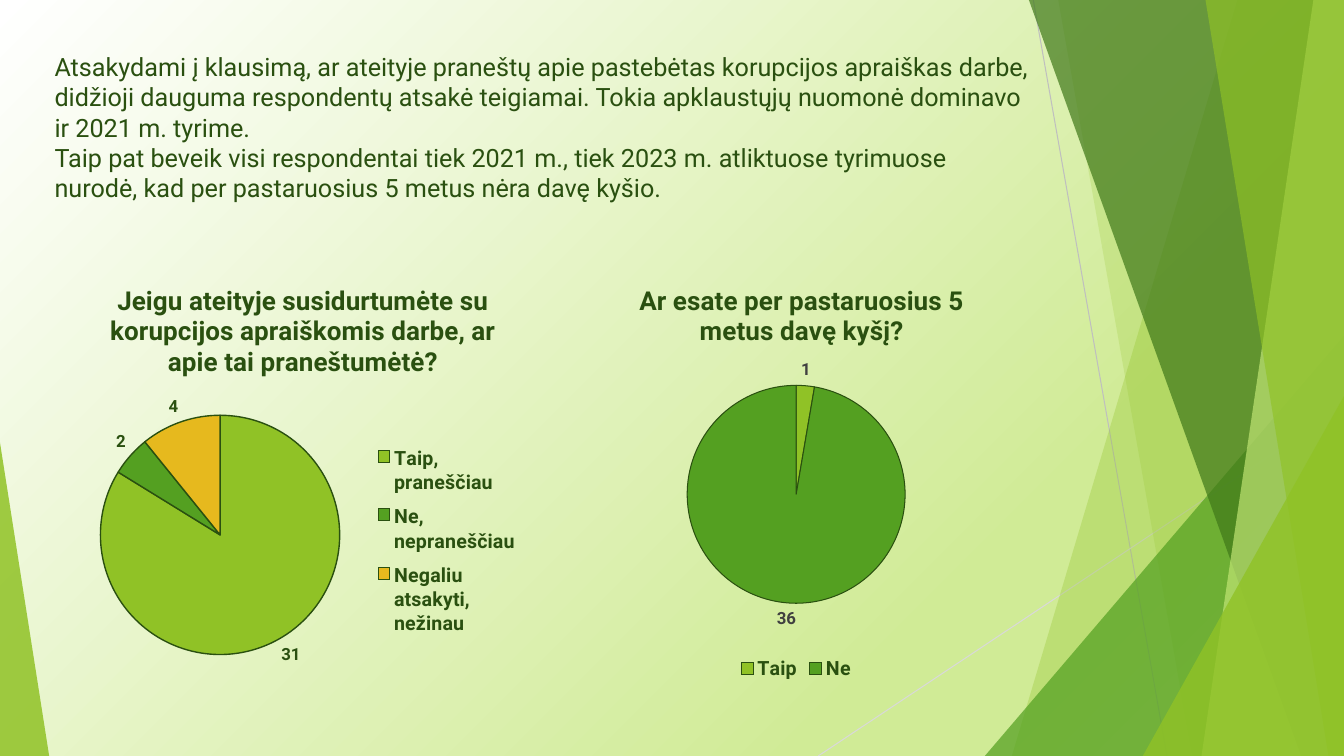
import dataclasses

import pptx
import pptx.chart.data
import pptx.dml.color
import pptx.enum.chart
import pptx.enum.shapes
import pptx.enum.text
import pptx.oxml
import pptx.oxml.ns
import pptx.util

Cm = pptx.util.Cm
Pt = pptx.util.Pt
RGBColor = pptx.dml.color.RGBColor
LegendPosition = pptx.enum.chart.XL_LEGEND_POSITION
qn = pptx.oxml.ns.qn

FONT = "Roboto"
WHITE = RGBColor(0xFF, 0xFF, 0xFF)
PALE_LIME = RGBColor(0xD0, 0xEB, 0x96)
MIST = RGBColor(0xDF, 0xF1, 0xB9)
LIME = RGBColor(0x90, 0xC2, 0x26)
LIGHT_LIME = RGBColor(0xC0, 0xE4, 0x74)
GREEN = RGBColor(0x54, 0xA0, 0x21)
FOREST = RGBColor(0x3F, 0x78, 0x19)
DARK_GREEN = RGBColor(0x2A, 0x50, 0x10)
AMBER = RGBColor(0xE6, 0xB9, 0x1E)
CHARCOAL = RGBColor(0x40, 0x40, 0x40)
SILVER = RGBColor(0xBF, 0xBF, 0xBF)
LIGHT_GREY = RGBColor(0xD9, 0xD9, 0xD9)

BACKGROUND_STOPS = [(0, WHITE), (74, PALE_LIME), (83, PALE_LIME), (100, MIST)]
SLICE_COLORS = [LIME, GREEN, AMBER]

INTRO = (
    "Atsakydami į klausimą, ar ateityje praneštų apie pastebėtas korupcijos "
    "apraiškas darbe, didžioji dauguma respondentų atsakė teigiamai. Tokia "
    "apklaustųjų nuomonė dominavo ir 2021 m. tyrime.\v"
    "Taip pat beveik visi respondentai tiek 2021 m., tiek 2023 m. atliktuose "
    "tyrimuose nurodė, kad per pastaruosius 5 metus nėra davę kyšio."
)


@dataclasses.dataclass
class Box:
    """A region in centimetres."""
    left: float
    top: float
    width: float
    height: float

    @property
    def right(self):
        return self.left + self.width

    @property
    def bottom(self):
        return self.top + self.height

    def lengths(self):
        return Cm(self.left), Cm(self.top), Cm(self.width), Cm(self.height)


@dataclasses.dataclass
class Survey:
    question: str
    answers: dict
    legend_position: LegendPosition
    label_color: RGBColor
    outline: float
    title_layout: dict
    pie_layout: dict
    legend_layout: dict


def paint_background(page):
    fill = page.background.fill
    fill.gradient()
    fill.gradient_angle = 315
    stops = next(page.element.iter(qn("a:gsLst")))
    for old in list(stops):
        stops.remove(old)
    for percent, color in BACKGROUND_STOPS:
        stop = pptx.oxml.parse_xml(
            f'<a:gs {pptx.oxml.ns.nsdecls("a")} pos="{percent * 1000}">'
            f'<a:srgbClr val="{color}"/></a:gs>')
        stops.append(stop)


def paint_glass(shape, color, opacity):
    """Fill a shape with a see-through colour; opacity is a percentage."""
    shape.shadow.inherit = False
    shape.line.fill.background()
    shape.fill.solid()
    shape.fill.fore_color.rgb = color
    color_node = next(shape.element.spPr.iter(qn("a:srgbClr")))
    alpha = color_node.makeelement(qn("a:alpha"), {"val": str(opacity * 1000)})
    color_node.append(alpha)


def add_hairline(page, start, end, color):
    line = page.shapes.add_connector(
        pptx.enum.shapes.MSO_CONNECTOR.STRAIGHT, *map(Cm, start + end))
    line.line.color.rgb = color
    line.line.width = Pt(0.75)
    properties = line.element.spPr
    properties.append(properties.makeelement(qn("a:effectLst"), {}))


def add_facet(page, box, top_inset, bottom_inset, color, opacity):
    """Panel from a slanted left edge to the right side of the box."""
    builder = page.shapes.build_freeform(Cm(box.right - top_inset), Cm(box.top))
    builder.add_line_segments([
        (Cm(box.right), Cm(box.top)),
        (Cm(box.right), Cm(box.bottom)),
        (Cm(box.right - bottom_inset), Cm(box.bottom)),
    ])
    paint_glass(builder.convert_to_shape(), color, opacity)


def add_corner(page, box, width, height, color, opacity, on_right=True):
    """Right triangle in a bottom corner of the box."""
    left = box.right - width if on_right else box.left
    corner = page.shapes.add_shape(
        pptx.enum.shapes.MSO_SHAPE.ISOSCELES_TRIANGLE,
        *Box(left, box.bottom - height, width, height).lengths())
    corner.adjustments[0] = 1 if on_right else 0
    paint_glass(corner, color, opacity)


def add_decoration(page, box):
    right, bottom = box.right, box.bottom
    add_hairline(page, (right - 7.83, box.top), (right - 4.46, bottom), SILVER)
    add_hairline(page, (right, box.top + 10.24), (right - 13.25, bottom), LIGHT_GREY)
    add_facet(page, box, 2.68, 8.37, LIME, 30)
    add_facet(page, box, 7.2, 3.82, LIME, 20)
    add_corner(page, box, 9.05, 10.59, GREEN, 72)
    add_facet(page, box, 7.94, 1.08, FOREST, 70)
    add_facet(page, box, 0.77, 3.59, LIGHT_LIME, 70)
    add_facet(page, box, 3.49, 0.39, LIME, 65)
    add_corner(page, box, 5.07, 9.07, LIME, 80)
    add_corner(page, box, 1.24, 7.9, LIME, 85, on_right=False)


def style_font(font, size, color, bold):
    font.name = FONT
    font.size = Pt(size)
    font.color.rgb = color
    font.bold = bold


def add_intro(page, box):
    title = page.shapes.title
    title.left, title.top, title.width, title.height = box.lengths()
    title.element.getparent().append(title.element)  # in front of the decoration
    frame = title.text_frame
    frame.text = INTRO
    frame.word_wrap = True
    frame.auto_size = pptx.enum.text.MSO_AUTO_SIZE.NONE
    frame.vertical_anchor = pptx.enum.text.MSO_ANCHOR.TOP
    para = frame.paragraphs[0]
    para.alignment = pptx.enum.text.PP_ALIGN.LEFT
    style_font(para.font, 18, DARK_GREEN, False)


def set_layout(chart, tag, index, layout):
    """Place a chart part by fractions of the chart's size."""
    part = next(chart.element.iter(qn(tag)))
    for old in part.findall(qn("c:layout")):
        part.remove(old)
    modes = "".join(f'<c:{key}Mode val="edge"/>' for key in "xy")
    sizes = "".join(f'<c:{key} val="{value}"/>' for key, value in layout.items())
    target = '<c:layoutTarget val="inner"/>' if tag == "c:plotArea" else ""
    part.insert(index, pptx.oxml.parse_xml(
        f'<c:layout {pptx.oxml.ns.nsdecls("c")}><c:manualLayout>'
        f'{target}{modes}{sizes}</c:manualLayout></c:layout>'))


def add_survey_pie(page, box, survey):
    data = pptx.chart.data.CategoryChartData()
    data.categories = survey.answers.keys()
    data.add_series(survey.question, survey.answers.values())
    chart = page.shapes.add_chart(
        pptx.enum.chart.XL_CHART_TYPE.PIE, *box.lengths(), data).chart
    chart.font.name = FONT
    chart.font.size = Pt(10)

    chart.has_title = True
    chart.chart_title.text_frame.text = survey.question
    style_font(chart.chart_title.text_frame.paragraphs[0].font, 18.6, DARK_GREEN, True)
    set_layout(chart, "c:title", 1, survey.title_layout)

    chart.has_legend = True
    chart.legend.position = survey.legend_position
    chart.legend.include_in_layout = False
    style_font(chart.legend.font, 14, DARK_GREEN, True)
    if survey.legend_layout:
        set_layout(chart, "c:legend", 1, survey.legend_layout)

    plot = chart.plots[0]
    plot.vary_by_categories = True
    set_layout(chart, "c:plotArea", 0, survey.pie_layout)
    for index, color in enumerate(SLICE_COLORS[:len(survey.answers)]):
        slice_format = plot.series[0].points[index].format
        slice_format.fill.solid()
        slice_format.fill.fore_color.rgb = color
        slice_format.line.color.rgb = DARK_GREEN
        slice_format.line.width = Pt(survey.outline)
    plot.has_data_labels = True
    labels = plot.data_labels
    labels.show_value = True
    labels.show_percentage = False
    labels.position = pptx.enum.chart.XL_LABEL_POSITION.OUTSIDE_END
    style_font(labels.font, 12, survey.label_color, True)


REPORTING = Survey(
    "Jeigu ateityje susidurtumėte su korupcijos apraiškomis darbe, ar apie tai praneštumėtė?",
    {"Taip, praneščiau": 31, "Ne, nepraneščiau": 2, "Negaliu atsakyti, nežinau": 4},
    LegendPosition.RIGHT, DARK_GREEN, 1, {"x": 0.12, "y": 0.05},
    {"x": 0.11, "y": 0.37, "w": 0.47, "h": 0.56},
    {"x": 0.64, "y": 0.42, "w": 0.3, "h": 0.49})
BRIBES = Survey(
    "Ar esate per pastaruosius 5 metus davę kyšį?", {"Taip": 1, "Ne": 36},
    LegendPosition.BOTTOM, CHARCOAL, 0.75, {"x": 0.15, "y": 0.05},
    {"x": 0.26, "y": 0.3, "w": 0.48, "h": 0.51}, {})


def main():
    deck = pptx.Presentation()
    slide_box = Box(0, 0, 33.87, 19.05)
    deck.slide_width, deck.slide_height = Cm(slide_box.width), Cm(slide_box.height)
    page = deck.slides.add_slide(deck.slide_layouts[5])
    paint_background(page)
    add_decoration(page, slide_box)
    add_intro(page, Box(1.12, 1.17, 25.22, 4.09))
    add_survey_pie(page, Box(1.12, 6.48, 12.83, 10.77), REPORTING)
    add_survey_pie(page, Box(14.25, 6.48, 11.63, 10.77), BRIBES)
    deck.save("out.pptx")


if __name__ == "__main__":
    main()
